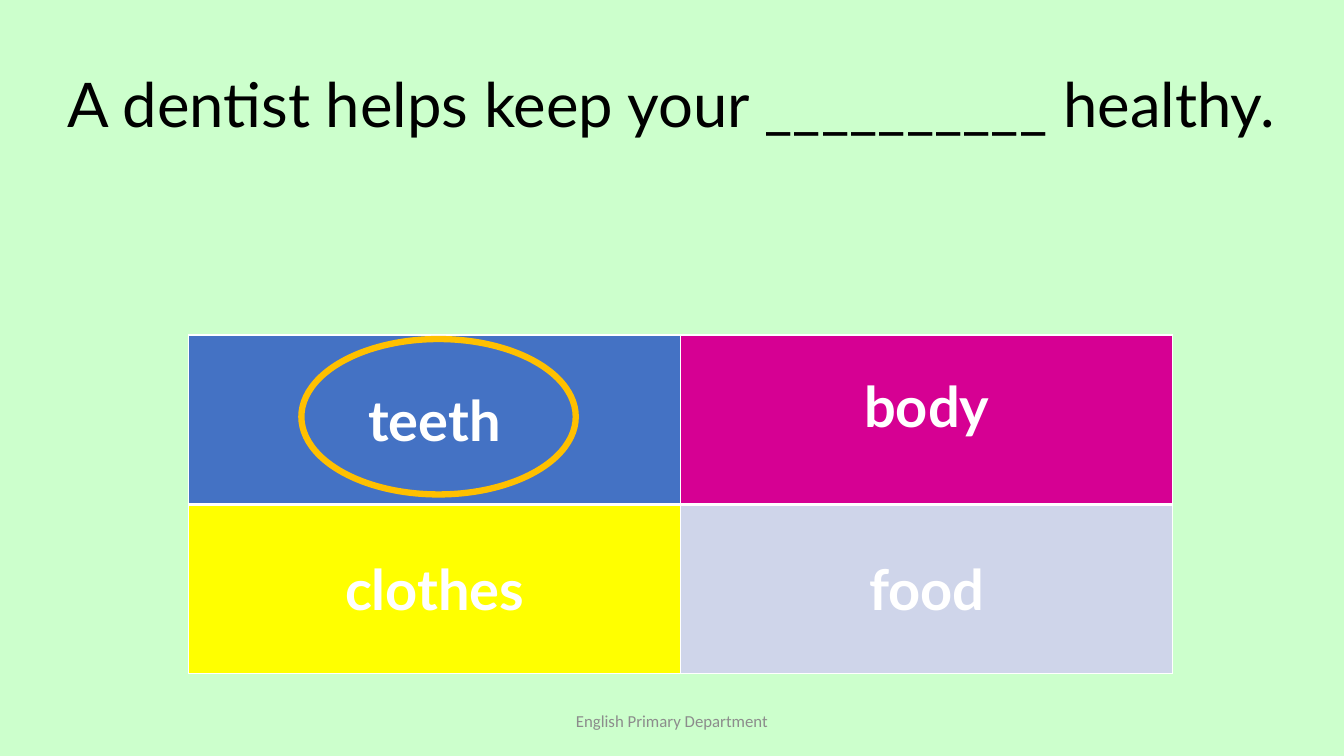
from lxml import etree
from pptx import Presentation
from pptx.dml.color import RGBColor
from pptx.enum.shapes import MSO_SHAPE
from pptx.enum.text import MSO_ANCHOR, PP_ALIGN
from pptx.oxml.ns import qn
from pptx.util import Pt

CENTER = PP_ALIGN.CENTER
TOP, MIDDLE = MSO_ANCHOR.TOP, MSO_ANCHOR.MIDDLE
ELLIPSE = MSO_SHAPE.OVAL

COLORS = {
    "background": "CCFFCC", "question": "000000", "white": "FFFFFF",
    "blue": "4472C4", "pink": "D60093", "yellow": "FFFF00", "lavender": "CFD5EA",
    "ring": "FFC000", "footer": "8C8C8C",
}
ANSWERS = [[("teeth", "blue"), ("body", "pink")],
           [("clothes", "yellow"), ("food", "lavender")]]


def rgb(name):
    return RGBColor.from_string(COLORS[name])


def write(tf, text, size, color, font="Lato", bold=False, anchor=MIDDLE, spacing=1.0):
    tf.word_wrap = True
    tf.vertical_anchor = anchor
    p = tf.paragraphs[0]
    p.alignment = CENTER
    p.line_spacing = spacing
    r = p.add_run()
    r.text = text
    r.font.size, r.font.name, r.font.bold = Pt(size), font, bold
    r.font.color.rgb = rgb(color)


def set_border(cell, side, width):
    ln = etree.SubElement(cell._tc.get_or_add_tcPr(), qn(f"a:ln{side}"), w=str(Pt(width)))
    fill = etree.SubElement(ln, qn("a:solidFill"))
    etree.SubElement(fill, qn("a:srgbClr"), val=COLORS["white"])


def add_question(s, x, y, w, h):
    sp = s.shapes.title
    sp.left, sp.top, sp.width, sp.height = Pt(x), Pt(y), Pt(w), Pt(h)
    write(sp.text_frame, "A dentist helps keep your __________ healthy.", 44, "question",
          anchor=TOP, spacing=1.5)


def add_answers(s, x, y, w, h):
    """Draw the grid of answers and ring the correct one."""
    frame = s.shapes.add_table(2, 2, Pt(x), Pt(y), Pt(w), Pt(h))
    table = frame.table
    for i, row in enumerate(ANSWERS):
        for j, (word, color) in enumerate(row):
            cell = table.cell(i, j)
            for side in "LRTB":
                set_border(cell, side, 3 if side == "B" and i == 0 else 1)
            cell.fill.solid()
            cell.fill.fore_color.rgb = rgb(color)
            cell.vertical_anchor = MIDDLE
            write(cell.text_frame, word, 40, "white", bold=True)
    table.cell(0, 1).margin_bottom = Pt(24)  # "body" sits a little higher

    ring = s.shapes.add_shape(ELLIPSE, Pt(x + 80.6), Pt(y + 2.9), Pt(196), Pt(111))
    ring.shadow.inherit = False
    ring.fill.background()
    ring.line.color.rgb = rgb("ring")
    ring.line.width = Pt(4.5)


def add_footer(s, x, y, w, h):
    sp = s.shapes.add_textbox(Pt(x), Pt(y), Pt(w), Pt(h))
    write(sp.text_frame, "English Primary Department", 12, "footer", font="Calibri")


def main():
    prs = Presentation()
    prs.slide_width, prs.slide_height = Pt(960), Pt(540)
    s = prs.slides.add_slide(prs.slide_layouts[5])
    s.background.fill.solid()
    s.background.fill.fore_color.rgb = rgb("background")
    add_question(s, -13.7, 17.3, 987, 160)
    add_answers(s, 134.7, 239.3, 703, 242)
    add_footer(s, 318, 500.5, 324, 28.8)
    prs.save("out.pptx")


if __name__ == "__main__":
    main()
